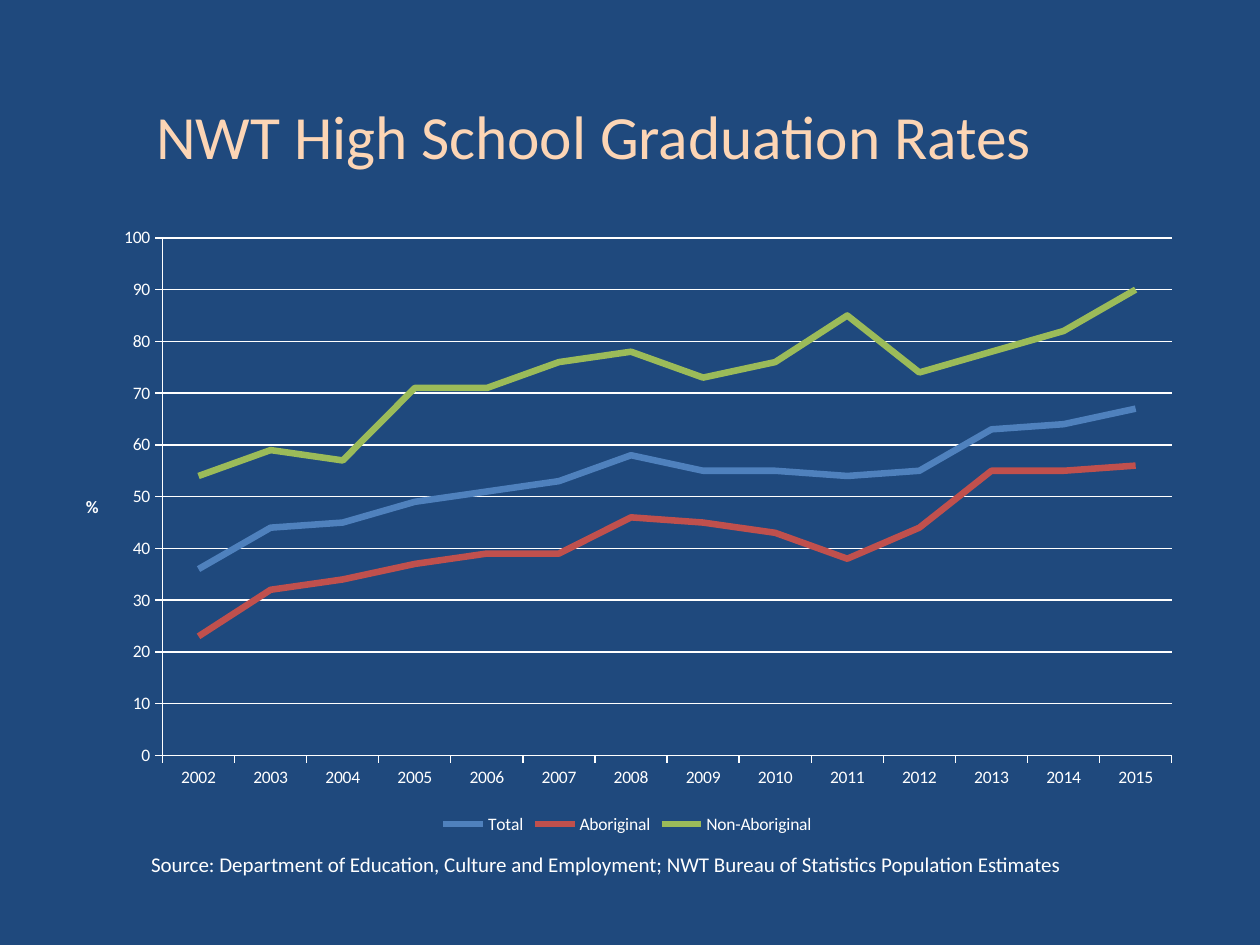
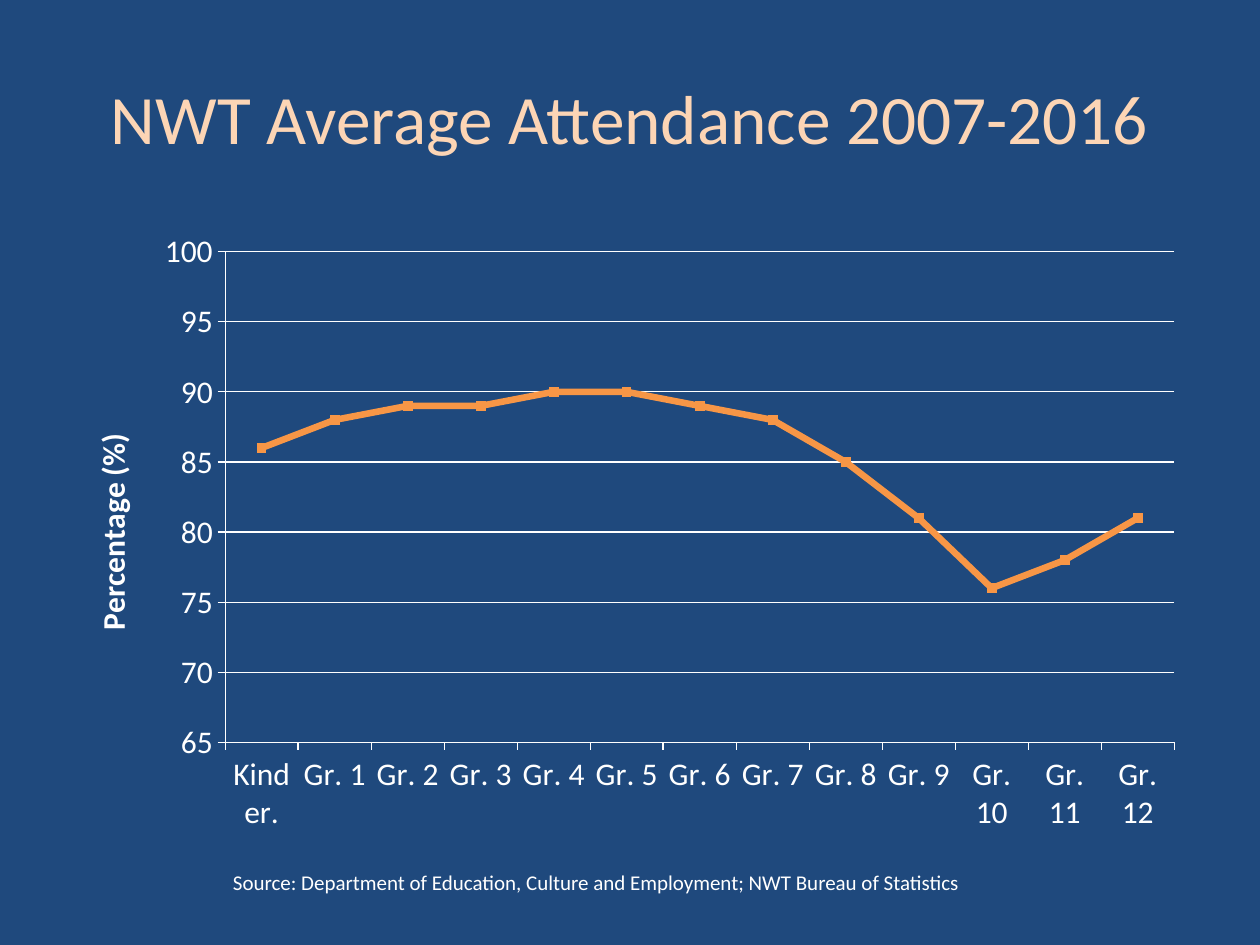
import pptx
import pptx.chart.data
import pptx.dml.color
import pptx.enum.chart
import pptx.enum.text
import pptx.util
from pptx.oxml import parse_xml
from pptx.oxml.ns import nsdecls

FONT = "Calibri"
WIDTH, HEIGHT = 10, 7.5
COLORS = {
    "background": "1F497D",
    "title": "FCD5B5",
    "text": "FFFFFF",
    "Total": "4F81BD",
    "Aboriginal": "C0504D",
    "Non-Aboriginal": "9BBB59",
    "Series 1": "F79646",
}
GRADUATION_YEARS = [str(year) for year in range(2002, 2016)]
GRADUATION_RATES = {
    "Total": [36, 44, 45, 49, 51, 53, 58, 55, 55, 54, 55, 63, 64, 67],
    "Aboriginal": [23, 32, 34, 37, 39, 39, 46, 45, 43, 38, 44, 55, 55, 56],
    "Non-Aboriginal": [54, 59, 57, 71, 71, 76, 78, 73, 76, 85, 74, 78, 82, 90],
}
GRADES = ["Kinder."] + [f"Gr. {grade}" for grade in range(1, 13)]
ATTENDANCE = {"Series 1": [86, 88, 89, 89, 90, 90, 89, 88, 85, 81, 76, 78, 81]}
SOURCE = ("Source: Department of Education, Culture and Employment; "
          "NWT Bureau of Statistics")


def rgb(name):
    return pptx.dml.color.RGBColor.from_string(COLORS[name])


def place(left, top, width, height):
    """Turn inches into lengths for the shape methods."""
    return [pptx.util.Inches(length) for length in (left, top, width, height)]


def style_font(font, size, color="text", bold=None):
    font.name, font.size, font.bold = FONT, pptx.util.Pt(size), bold
    font.color.rgb = rgb(color)


def style_line(line, color="text", width=0.75):
    line.color.rgb = rgb(color)
    line.width = pptx.util.Pt(width)


def add_slide(deck):
    slide = deck.slides.add_slide(deck.slide_layouts[6])
    slide.background.fill.solid()
    slide.background.fill.fore_color.rgb = rgb("background")
    return slide


def add_text(slide, box, words, size, color="text", align="LEFT"):
    frame = slide.shapes.add_textbox(*place(*box)).text_frame
    frame.word_wrap = True
    frame.vertical_anchor = pptx.enum.text.MSO_ANCHOR.MIDDLE
    paragraph = frame.paragraphs[0]
    paragraph.text = words
    paragraph.alignment = pptx.enum.text.PP_ALIGN[align]
    style_font(paragraph.font, size, color)


def add_title(slide, box, words, size):
    add_text(slide, box, words, size, "title", "CENTER")


def set_plot_area(chart, shares):
    """Fix the inner plot area as shares of the chart's size."""
    plot_area = chart.plots[0]._element.getparent()
    for old in plot_area.findall(pptx.oxml.ns.qn("c:layout")):
        plot_area.remove(old)
    sides = "".join(f'<c:{side} val="{share}"/>' for side, share in zip("xywh", shares))
    plot_area.insert(0, parse_xml(
        f'<c:layout {nsdecls("c")}><c:manualLayout><c:layoutTarget val="inner"/>'
        f'<c:xMode val="edge"/><c:yMode val="edge"/>{sides}</c:manualLayout></c:layout>'))


def style_value_axis(axis, scale, title, size, rotation):
    axis.minimum_scale, axis.maximum_scale, axis.major_unit = scale
    axis.has_major_gridlines = True
    style_line(axis.major_gridlines.format.line)
    axis.tick_labels.number_format = "0"
    axis.tick_labels.number_format_is_linked = False
    frame = axis.axis_title.text_frame
    frame.text = title
    style_font(frame.paragraphs[0].font, size, bold=True)
    frame._txBody.bodyPr.set("rot", str(rotation * 60000))
    frame._txBody.bodyPr.set("vert", "horz")


def add_line_chart(slide, box, categories, rates, size, scale, axis_title,
                   plot_shares, rotation=-90, markers=False):
    data = pptx.chart.data.CategoryChartData(number_format="0")
    data.categories = categories
    for name, values in rates.items():
        data.add_series(name, values)
    kinds = pptx.enum.chart.XL_CHART_TYPE
    kind = kinds.LINE_MARKERS if markers else kinds.LINE
    chart = slide.shapes.add_chart(kind, *place(*box), data).chart
    chart.has_title = False
    style_font(chart.font, size)

    style_value_axis(chart.value_axis, scale, axis_title, size, rotation)
    for axis in (chart.category_axis, chart.value_axis):
        axis.major_tick_mark = pptx.enum.chart.XL_TICK_MARK.OUTSIDE
        style_line(axis.format.line)

    for series in chart.plots[0].series:
        series.smooth = False
        style_line(series.format.line, series.name, 3.75)
        if markers:
            series.marker.style = pptx.enum.chart.XL_MARKER_STYLE.SQUARE
            series.marker.size = 5
            series.marker.format.fill.solid()
            series.marker.format.fill.fore_color.rgb = rgb(series.name)
            style_line(series.marker.format.line, series.name)

    chart.has_legend = len(rates) > 1
    if chart.has_legend:
        chart.legend.position = pptx.enum.chart.XL_LEGEND_POSITION.BOTTOM
        chart.legend.include_in_layout = False
    set_plot_area(chart, plot_shares)


def add_graduation_slide(deck):
    slide = add_slide(deck)
    add_title(slide, (1, 0.69, 7.42, 0.77), "NWT High School Graduation Rates", 35.1)
    add_text(slide, (1.1, 6.66, 8.42, 0.4), SOURCE + " Population Estimates", 12)
    add_line_chart(slide, (0.48, 1.71, 9, 4.95), GRADUATION_YEARS, GRADUATION_RATES,
                   10, (0, 100, 10), "%", (0.09, 0.036, 0.89, 0.83), rotation=0)


def add_attendance_slide(deck):
    slide = add_slide(deck)
    add_title(slide, (0.5, 0.3, 9, 1.25), "NWT Average Attendance 2007-2016", 39.6)
    add_line_chart(slide, (0.5, 1.75, 9, 4.95), GRADES, ATTENDANCE, 18, (65, 100, 5),
                   "Percentage (%)", (0.143, 0.05, 0.837, 0.787), markers=True)
    add_text(slide, (1.75, 6.75, 7.98, 0.5), SOURCE, 12)


def main():
    deck = pptx.Presentation()
    deck.slide_width = pptx.util.Inches(WIDTH)
    deck.slide_height = pptx.util.Inches(HEIGHT)
    add_graduation_slide(deck)
    add_attendance_slide(deck)
    deck.save("out.pptx")


if __name__ == "__main__":
    main()
